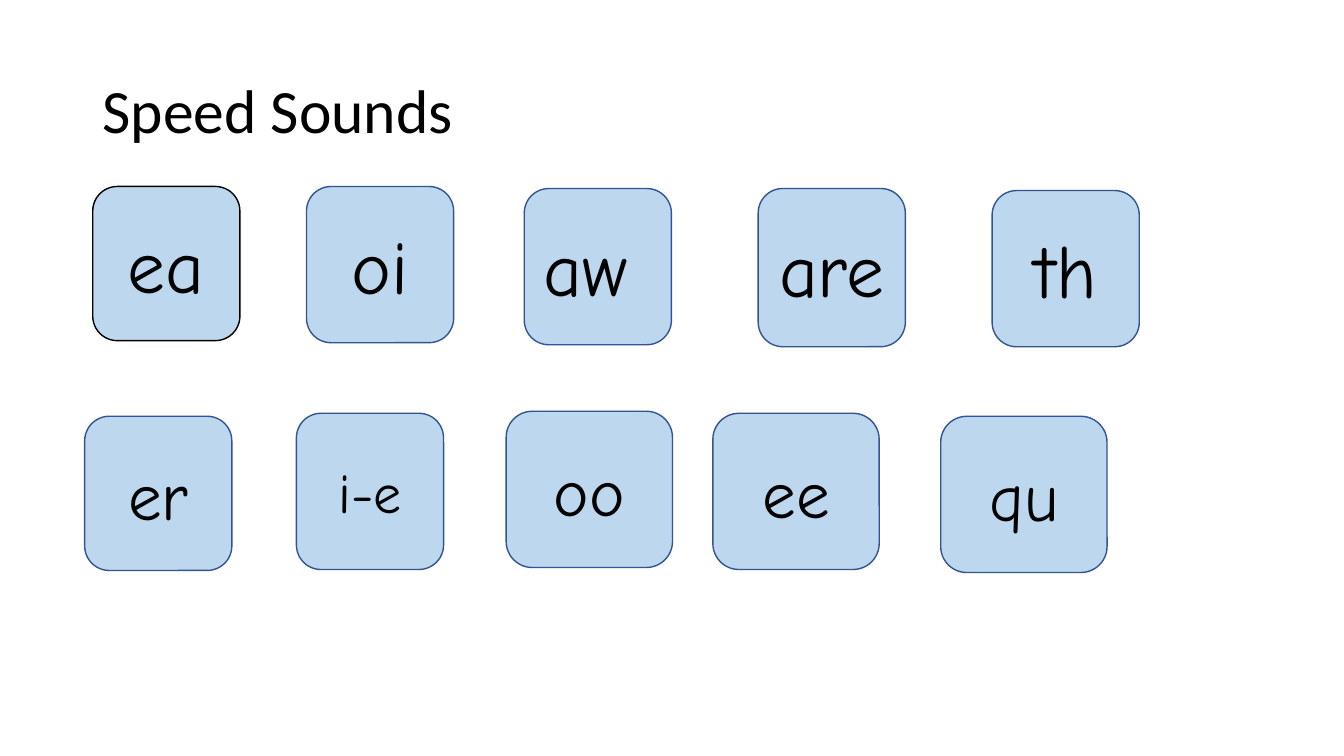
from pptx import Presentation
from pptx.dml.color import RGBColor
from pptx.enum.shapes import MSO_SHAPE as Shape
from pptx.enum.text import MSO_ANCHOR as Anchor, PP_ALIGN as Align
from pptx.util import Inches, Pt

BLACK = RGBColor(0x00, 0x00, 0x00)
NAVY = RGBColor(0x32, 0x54, 0x91)
SKY = RGBColor(0xBD, 0xD7, 0xEE)

CARDS = [
    ("ea", 0.92, 1.85, 1.46, 1.53, 54, BLACK),
    ("oi", 3.04, 1.85, 1.46, 1.55, 54, NAVY),
    ("aw ", 5.2, 1.87, 1.46, 1.55, 54, NAVY),
    ("are", 7.52, 1.87, 1.46, 1.57, 54, NAVY),
    ("th", 9.84, 1.89, 1.46, 1.55, 54, NAVY),
    ("er", 0.84, 4.13, 1.46, 1.53, 48, NAVY),
    ("i-e", 2.94, 4.1, 1.46, 1.55, 40, NAVY),
    ("oo", 5.02, 4.08, 1.65, 1.55, 48, NAVY),
    ("ee", 7.07, 4.1, 1.65, 1.55, 48, NAVY),
    ("qu", 9.33, 4.13, 1.65, 1.55, 48, NAVY),
]


def write(shape, text, font, size, align):
    """Put one middle-anchored line of black text in a shape."""
    frame = shape.text_frame
    frame.word_wrap = True
    frame.vertical_anchor = Anchor.MIDDLE
    para = frame.paragraphs[0]
    para.alignment = align
    run = para.add_run()
    run.text = text
    run.font.name = font
    run.font.size = Pt(size)
    run.font.color.rgb = BLACK
    return para


def add_title(slide, text):
    """Add the slide heading."""
    box = slide.shapes.add_textbox(Inches(0.92), Inches(0.4), Inches(11.5), Inches(1.45))
    para = write(box, text, "Calibri", 44, Align.LEFT)
    para.line_spacing = 0.9


def add_card(slide, sound, left, top, width, height, size, edge):
    """Add a rounded card that shows one sound."""
    card = slide.shapes.add_shape(
        Shape.ROUNDED_RECTANGLE, Inches(left), Inches(top), Inches(width), Inches(height)
    )
    card.shadow.inherit = False
    card.fill.solid()
    card.fill.fore_color.rgb = SKY
    card.line.color.rgb = edge
    card.line.width = Pt(1)
    write(card, sound, "Comic Neue", size, Align.CENTER)


def main():
    """Build the sound cards slide and save it."""
    deck = Presentation()
    deck.slide_width = Inches(13.33)
    deck.slide_height = Inches(7.5)
    slide = deck.slides.add_slide(deck.slide_layouts[6])
    add_title(slide, "Speed Sounds")
    for card in CARDS:
        add_card(slide, *card)
    deck.save("out.pptx")


if __name__ == "__main__":
    main()
